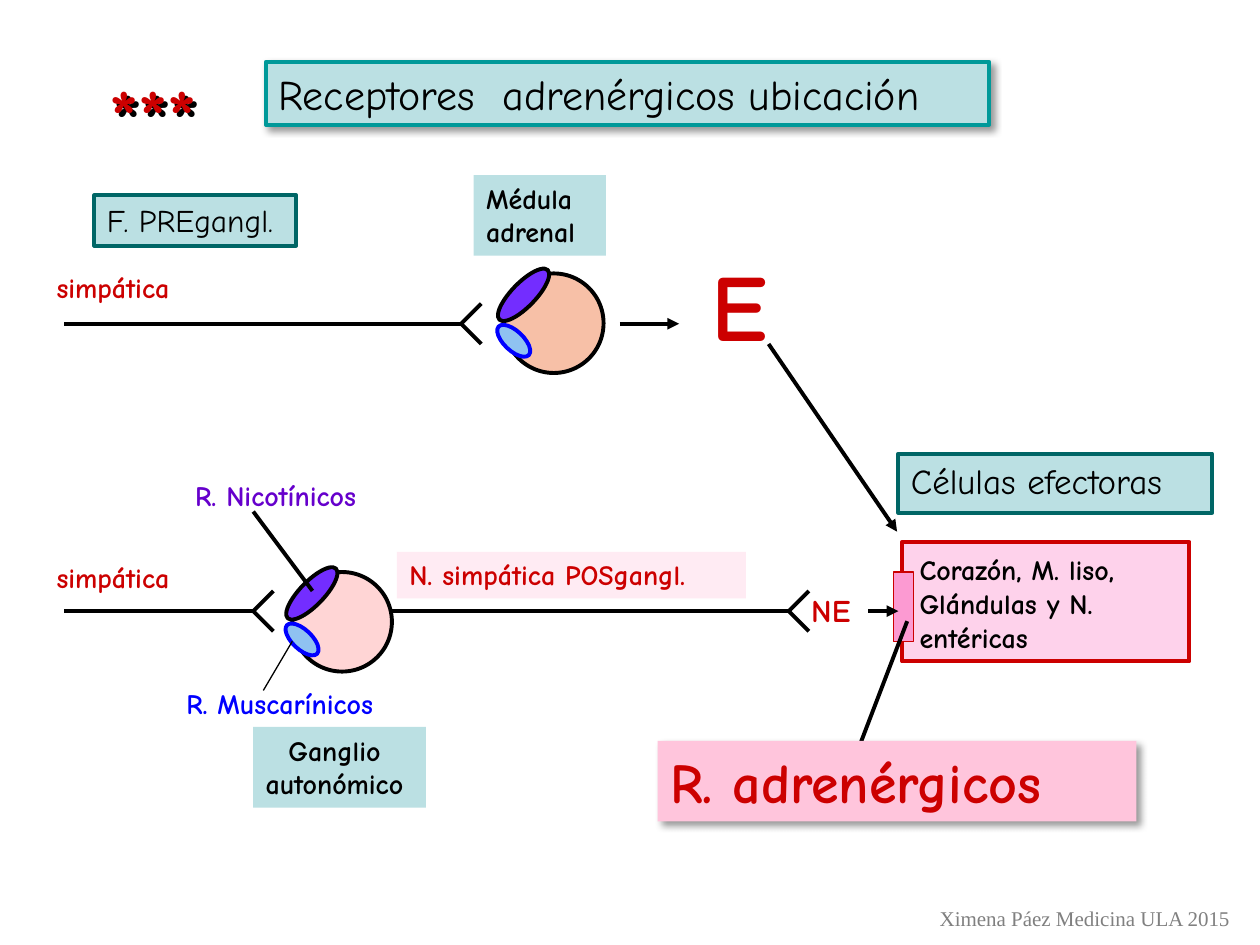
from dataclasses import dataclass

from lxml import etree
from pptx import Presentation
from pptx.dml.color import RGBColor
from pptx.enum.shapes import MSO_CONNECTOR, MSO_SHAPE
from pptx.enum.text import MSO_ANCHOR, MSO_AUTO_SIZE, PP_ALIGN
from pptx.oxml import parse_xml
from pptx.oxml.ns import nsdecls, qn
from pptx.util import Inches, Pt

RECT, OVAL = MSO_SHAPE.RECTANGLE, MSO_SHAPE.OVAL
LINE = MSO_CONNECTOR.STRAIGHT
TOP, FIXED = MSO_ANCHOR.TOP, MSO_AUTO_SIZE.NONE
LEFT, MID = PP_ALIGN.LEFT, PP_ALIGN.CENTER

# Grid: 100 columns by 75 rows of square cells
COLS, ROWS, UNIT = 100, 75, 0.1
FONT = "Comic Neue"
BLACK, RED, BLUE, TEAL = "000000", "CC0000", "0000FF", "BBE0E3"
THICK, THIN = 2.25, 0.75


@dataclass
class Label:
    text: str
    col: float
    row: float
    wide: float
    high: float
    size: float = 16
    ink: str = BLACK
    bold: bool = True
    fill: str | None = None
    edge: str | None = None
    shade: int = 0          # shadow opacity in percent
    blur: float = 4
    align: int = LEFT
    lead: float = 1         # left inset in grid columns
    trail: float = 1        # right inset in grid columns
    font: str = FONT


@dataclass
class Wire:
    x1: float
    y1: float
    x2: float
    y2: float
    width: float = THICK
    arrow: bool = False


def grid(n: float) -> int:
    return Inches(n * UNIT)


def tint(code: str) -> RGBColor:
    return RGBColor.from_string(code)


def paint(shape, fill: str | None, edge: str | None, width: float = THICK) -> None:
    if fill:
        shape.fill.solid()
        shape.fill.fore_color.rgb = tint(fill)
    else:
        shape.fill.background()
    if edge:
        shape.line.color.rgb = tint(edge)
        shape.line.width = Pt(width)
    else:
        shape.line.fill.background()


def cast(shape, shade: int, blur: float) -> None:
    """Give the shape a shadow 3 pt down and to the right."""
    effects = shape._element.spPr.find(qn("a:effectLst"))
    effects.append(parse_xml(
        f'<a:outerShdw {nsdecls("a")} blurRad="{Pt(blur)}" dist="{Pt(3)}" '
        f'dir="2700000" algn="tl" rotWithShape="0"><a:srgbClr val="{BLACK}">'
        f'<a:alpha val="{shade * 1000}"/></a:srgbClr></a:outerShdw>'))


def form(kind: int, col: float, row: float, wide: float, high: float,
         fill: str | None, edge: str | None, width: float = THICK, turn: float = 0):
    shape = slide.shapes.add_shape(kind, grid(col), grid(row), grid(wide), grid(high))
    shape.shadow.inherit = False
    shape.rotation = turn
    paint(shape, fill, edge, width)
    return shape


def write(shape, item: Label) -> None:
    frame = shape.text_frame
    frame.word_wrap, frame.auto_size = True, FIXED
    frame.vertical_anchor = TOP
    frame.margin_left, frame.margin_right = grid(item.lead), grid(item.trail)
    for i, words in enumerate(item.text.split("\n")):
        para = frame.paragraphs[0] if i == 0 else frame.add_paragraph()
        para.alignment = item.align
        run = para.add_run()
        run.text = words
        font = run.font
        font.name, font.size, font.bold = item.font, Pt(item.size), item.bold
        font.color.rgb = tint(item.ink)


def label(item: Label) -> None:
    box = form(RECT, item.col, item.row, item.wide, item.high, item.fill, item.edge)
    if item.shade:
        cast(box, item.shade, item.blur)
    write(box, item)


def head(item: Label) -> None:
    box = slide.shapes.title
    box.left, box.top = grid(item.col), grid(item.row)
    box.width, box.height = grid(item.wide), grid(item.high)
    box.shadow.inherit = False
    paint(box, item.fill, item.edge)
    cast(box, item.shade, item.blur)
    write(box, item)


def wire(item: Wire) -> None:
    link = slide.shapes.add_connector(
        LINE, grid(item.x1), grid(item.y1), grid(item.x2), grid(item.y2))
    link.line.color.rgb = tint(BLACK)
    link.line.width = Pt(item.width)
    if item.arrow:
        etree.SubElement(link.line._get_or_add_ln(), qn("a:tailEnd"), type="triangle")
    etree.SubElement(link._element.spPr, qn("a:effectLst"))


def axon(start: float, end: float, row: float) -> None:
    """A nerve fibre that ends in a two-pronged fork."""
    wire(Wire(start, row, end, row))
    for rise in (-1.6, 1.6):
        wire(Wire(end, row, end + 1.6, row + rise))


def cell(col: float, row: float, fill: str) -> None:
    """A round cell with its nicotinic and muscarinic receptors."""
    form(OVAL, col, row, 7.9, 7.9, fill, BLACK)
    form(OVAL, col + 0.6, row - 1.05, 1.9, 5.5, "732DFF", BLACK, turn=44.2)
    form(OVAL, col, row + 3.7, 1.55, 3.3, "8FC2F1", BLUE, turn=313.4)


TITLE = Label("Receptores  adrenérgicos ubicación", 21.1, 4.9, 57.4, 5, 24,
              bold=False, fill=TEAL, edge="009999", shade=40)
LABELS = [
    Label("F. PREgangl.", 7.5, 15.5, 16, 4, 18, bold=False, fill=TEAL, edge="006666"),
    Label("Células efectoras", 71.3, 36, 24.9, 4.7, 20, bold=False,
          fill=TEAL, edge="006666"),
    Label("simpática", 3.5, 21, 11.9, 3.7, ink=RED),
    Label("simpática", 3.5, 44, 11.9, 3.7, ink=RED),
    Label("R. Nicotínicos", 14.5, 37.5, 17, 3.7, ink="6600CC"),
    Label("R. Muscarínicos", 13.8, 54, 18.8, 3.7, ink=BLUE),
    Label("Médula\nadrenal", 37.6, 13.9, 10.5, 6.4, fill=TEAL),
    Label("Ganglio\nautonómico", 20.1, 57.7, 13.7, 6.4, fill=TEAL, align=MID,
          lead=0.4, trail=1.2),
    Label("N. simpática POSgangl.", 31.5, 43.8, 27.7, 3.7, ink=RED, fill="FFEBF3"),
    Label("Corazón, M. liso,\nGlándulas y N.\nentéricas", 72, 43.4, 21.6, 9),
    Label("E", 55.5, 19.1, 6.7, 10, 54, RED),
    Label("NE", 63.4, 46.4, 5.6, 4, 18, RED),
    Label("***", 7.7, 4.9, 11.8, 8.4, 44, RED, shade=100, blur=0),
    Label("Ximena Páez Medicina ULA 2015", 73.6, 71.4, 25.3, 3, 12, "808080",
          bold=False, font="Times New Roman"),
]
WIRES = [
    Wire(49.2, 25.7, 53.9, 25.7, arrow=True),
    Wire(61, 27.3, 71.2, 42.2, arrow=True),
    Wire(68.9, 48.5, 71.3, 48.5, arrow=True),
    Wire(20.9, 54.8, 23.2, 50.9, THIN),
    Wire(20.1, 40.6, 24.8, 46.9),
    Wire(68.1, 59.5, 72, 49.3),
]
RESULT = Label("R. adrenérgicos", 52.2, 58.8, 38, 6.4, 32, RED, fill="FFC5DC", shade=40)

deck = Presentation()
deck.slide_width, deck.slide_height = grid(COLS), grid(ROWS)
slide = deck.slides.add_slide(deck.slide_layouts[5])
head(TITLE)

# Nerve fibres and cells
for start, end, row in ((5.1, 36.6, 25.7), (5.1, 20.1, 48.5), (31.1, 62.6, 48.5)):
    axon(start, end, row)
cell(40, 21.7, "F7C0A7")
cell(23.2, 45.4, "FFD5D5")

# Effector cell and its receptor
form(RECT, 71.6, 43, 22.8, 9.5, "FED2EB", RED)
form(RECT, 70.9, 45.4, 1.6, 5.5, "FC9AD2", RED, THIN)

# Labels, then pointers, then the box that covers a pointer's end
for item in LABELS:
    label(item)
for item in WIRES:
    wire(item)
label(RESULT)

deck.save("out.pptx")
